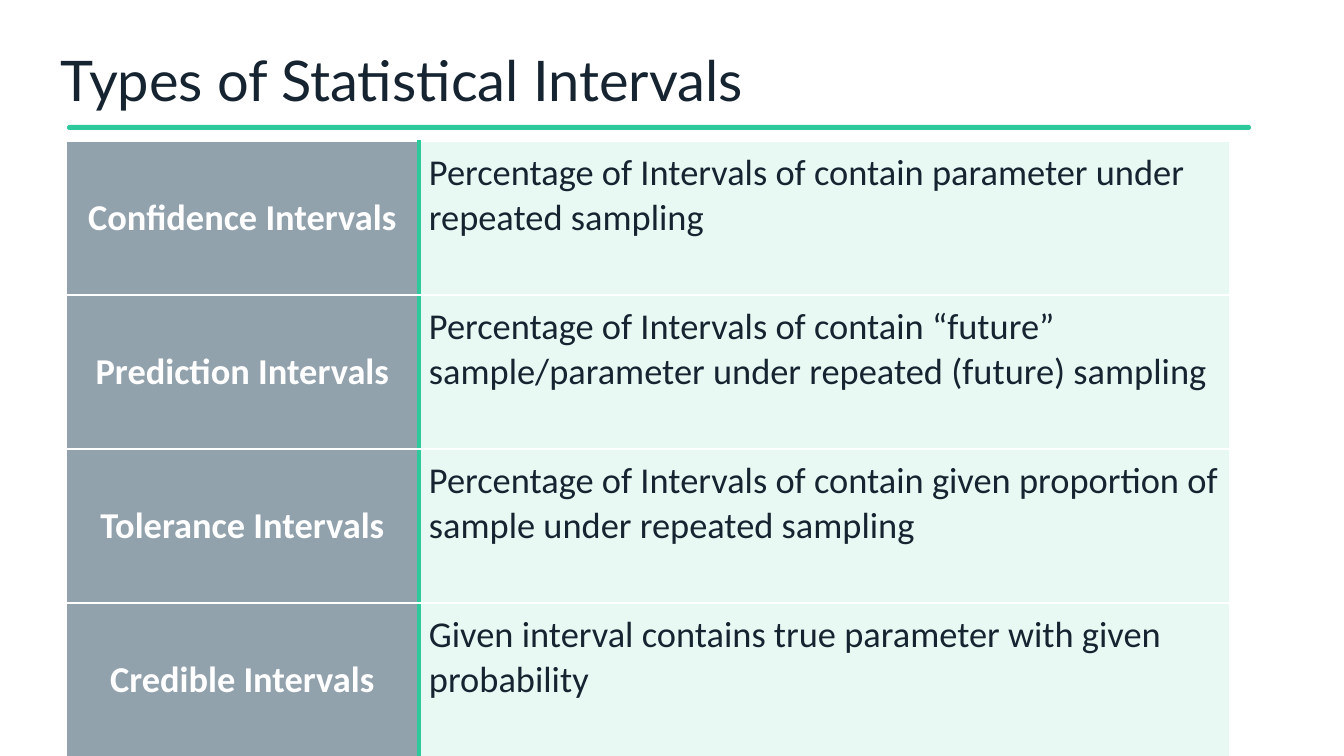
from lxml import etree
from pptx import Presentation
from pptx.dml.color import RGBColor
from pptx.enum.shapes import MSO_SHAPE
from pptx.enum.text import MSO_ANCHOR, PP_ALIGN
from pptx.oxml.ns import qn
from pptx.util import Pt

PX = 9071.43  # EMU per px, 100.8 px to the inch
ROUNDED = MSO_SHAPE.ROUNDED_RECTANGLE
TOP, MIDDLE, BOTTOM = MSO_ANCHOR.TOP, MSO_ANCHOR.MIDDLE, MSO_ANCHOR.BOTTOM
LEFT, CENTER = PP_ALIGN.LEFT, PP_ALIGN.CENTER

THEME = {
    "ink": "152430", "white": "FFFFFF", "accent": "2EC99B",
    "label_fill": "27465D", "text_fill": "D3F5EB",
    "title_font": "Lato", "body_font": "Calibri",
    "title_size": 40, "body_size": 26,
}
INTERVALS = [
    ("Confidence Intervals",
     "Percentage of Intervals of contain parameter under repeated sampling"),
    ("Prediction Intervals",
     "Percentage of Intervals of contain “future” sample/parameter under "
     "repeated (future) sampling"),
    ("Tolerance Intervals",
     "Percentage of Intervals of contain given proportion of sample under "
     "repeated sampling"),
    ("Credible Intervals",
     "Given interval contains true parameter with given probability"),
]
COL_WIDTHS = (353, 811)
ROW_HEIGHT = 154


def box(*lengths):
    return [round(v * PX) for v in lengths]


def write(tf, text, align, color, **font):
    p = tf.paragraphs[0]
    p.alignment = align
    r = p.add_run()
    r.text = text
    for name, value in font.items():
        setattr(r.font, name, value)
    r.font.color.rgb = RGBColor.from_string(THEME[color])
    return p


prs = Presentation()
prs.slide_width, prs.slide_height = box(1344, 756)
s = prs.slides.add_slide(prs.slide_layouts[6])

# Rule under the title
rule = s.shapes.add_shape(ROUNDED, *box(67, 125, 1184, 5))
rule.adjustments[0] = 0.5
rule.shadow.inherit = False
rule.fill.solid()
rule.fill.fore_color.rgb = RGBColor.from_string(THEME["accent"])
rule.line.fill.background()

# Title
tf = s.shapes.add_textbox(*box(58, 38, 1238, 79)).text_frame
tf.word_wrap = True
tf.vertical_anchor = BOTTOM
for side in ("left", "right", "top", "bottom"):
    setattr(tf, f"margin_{side}", box(3)[0])
p = write(tf, "Types of Statistical Intervals", LEFT, "ink",
          name=THEME["title_font"], size=Pt(THEME["title_size"]))
p.line_spacing = 0.9

# Table of interval types
table = s.shapes.add_table(
    len(INTERVALS), 2,
    *box(66, 141, sum(COL_WIDTHS), ROW_HEIGHT * len(INTERVALS))).table
table.first_row = table.horz_banding = False
for col, width in zip(table.columns, COL_WIDTHS):
    col.width = box(width)[0]

# Format of the label and the description column
COLUMNS = [
    {"fill": "label_fill", "color": "white", "bold": True,
     "align": CENTER, "anchor": MIDDLE, "edge": "lnR"},
    {"fill": "text_fill", "color": "ink", "bold": False,
     "align": LEFT, "anchor": TOP, "edge": "lnL"},
]
for i, texts in enumerate(INTERVALS):
    table.rows[i].height = box(ROW_HEIGHT)[0]
    for j, (text, style) in enumerate(zip(texts, COLUMNS)):
        cell = table.cell(i, j)
        cell.vertical_anchor = style["anchor"]
        for side in ("left", "right", "top", "bottom"):
            setattr(cell, f"margin_{side}", box(10)[0])
        write(cell.text_frame, text, style["align"], style["color"],
              name=THEME["body_font"], size=Pt(THEME["body_size"]),
              bold=style["bold"])

        # Half transparent fill
        cell.fill.solid()
        cell.fill.fore_color.rgb = RGBColor.from_string(THEME[style["fill"]])
        tc_pr = cell._tc.get_or_add_tcPr()
        rgb = tc_pr.find(qn("a:solidFill")).find(qn("a:srgbClr"))
        etree.SubElement(rgb, qn("a:alpha"), val="50000")

        # Green divider between the columns, white lines between the rows
        borders = [(style["edge"], 3, "accent"),
                   ("lnT", 1, "white"), ("lnB", 1, "white")]
        for k, (tag, width, color) in enumerate(borders):
            ln = etree.Element(qn(f"a:{tag}"), w=str(Pt(width)))
            fill = etree.SubElement(ln, qn("a:solidFill"))
            etree.SubElement(fill, qn("a:srgbClr"), val=THEME[color])
            tc_pr.insert(k, ln)

prs.save("out.pptx")
